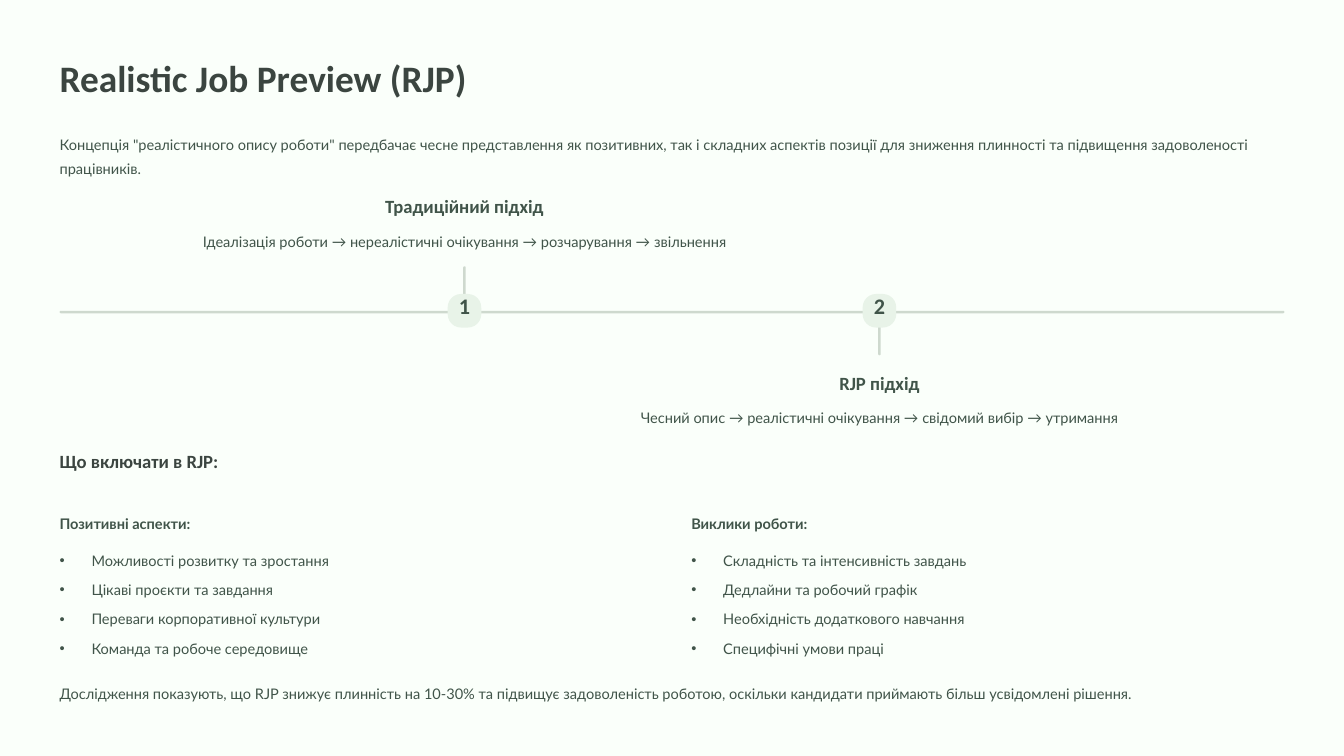
"""Build a slide on the Realistic Job Preview approach."""
from lxml.etree import SubElement
from pptx import Presentation
from pptx.dml.color import RGBColor as Color
from pptx.enum.shapes import MSO_SHAPE as Shape
from pptx.enum.text import MSO_ANCHOR as Anchor, MSO_AUTO_SIZE as AutoSize, PP_ALIGN as Align
from pptx.oxml.ns import qn
from pptx.util import Inches, Pt

COLORS = {"page": "FAFFFA", "title": "3B4540", "text": "405449",
          "line": "CED9CE", "badge": "E8F3E8"}
STYLES = {"title": ("Calibri", 32, 40, True, "title"),
          "section": ("Calibri", 16, 20, True, "title"),
          "heading": ("Calibri", 16, 20, True, "text"),
          "number": ("Calibri", 19, 19, True, "text"),
          "strong": ("Lato", 12.5, 20.5, True, "text"),
          "body": ("Lato", 12.5, 20.5, False, "text")}
COLUMNS, ROWS = 16, 9
MARGIN = 0.71
CONTENT = COLUMNS - 2 * MARGIN
LINE_HEIGHT = 0.28
AXIS = 3.7
BAR = 0.03
BADGE = 0.4

STEPS = [
    (5.53, "1", AXIS - 0.53, 2.31, "Традиційний підхід",
     "Ідеалізація роботи → нереалістичні очікування → розчарування → звільнення"),
    (10.47, "2", AXIS, 4.41, "RJP підхід",
     "Чесний опис → реалістичні очікування → свідомий вибір → утримання"),
]
ASPECTS = [
    (MARGIN, "Позитивні аспекти:",
     ["Можливості розвитку та зростання", "Цікаві проєкти та завдання",
      "Переваги корпоративної культури", "Команда та робоче середовище"]),
    (8.23, "Виклики роботи:",
     ["Складність та інтенсивність завдань", "Дедлайни та робочий графік",
      "Необхідність додаткового навчання", "Специфічні умови праці"]),
]


class SlideBuilder:
    """Hold the slide, its grid and its text styles."""

    def __init__(self, deck):
        """Add a two-list page with a plain background."""
        self.cell_width = deck.slide_width / COLUMNS
        self.cell_height = deck.slide_height / ROWS
        self.page = deck.slides.add_slide(deck.slide_layouts[3])
        self.paint(self.page.background.fill, "page")

    def paint(self, fill, color):
        """Apply a solid colour."""
        fill.solid()
        fill.fore_color.rgb = Color.from_string(COLORS[color])

    def place(self, left, top, width, height):
        """Turn columns and rows into slide lengths."""
        return (round(left * self.cell_width), round(top * self.cell_height),
                round(width * self.cell_width), round(height * self.cell_height))

    def set_lines(self, box, lines, style, align=Align.LEFT, bullets=False):
        """Set one styled paragraph per line."""
        font, size, leading, bold, color = STYLES[style]
        frame = box.text_frame
        frame.word_wrap = True
        frame.auto_size = AutoSize.NONE
        frame.vertical_anchor = Anchor.TOP
        frame.margin_left = frame.margin_right = frame.margin_top = frame.margin_bottom = 0
        for index, line in enumerate(lines):
            para = frame.add_paragraph() if index else frame.paragraphs[0]
            para.alignment = align
            para.line_spacing = Pt(leading)
            para.space_before = Pt(0)
            para.space_after = Pt(4.7 if bullets else 0)
            if bullets:
                self.add_bullet(para)
            span = para.add_run()
            span.text = line
            span.font.name = font
            span.font.size = Pt(size)
            span.font.bold = bold
            span.font.color.rgb = Color.from_string(COLORS[color])

    def add_bullet(self, para):
        """Give a paragraph a hanging round bullet."""
        props = para._p.get_or_add_pPr()
        props.set("marL", str(Inches(0.38)))
        props.set("indent", str(-Inches(0.38)))
        SubElement(props, qn("a:buChar"), char="•")

    def add_text(self, text, style, left, top, width, height=LINE_HEIGHT, align=Align.LEFT):
        """Add a text box."""
        box = self.page.shapes.add_textbox(*self.place(left, top, width, height))
        self.set_lines(box, [text], style, align)

    def fill_placeholder(self, index, lines, style, area, bullets=False):
        """Move a template placeholder and fill it."""
        box = self.page.placeholders[index]
        box.left, box.top, box.width, box.height = self.place(*area)
        self.set_lines(box, lines, style, bullets=bullets)

    def add_block(self, left, top, width, height, color, rounding=0.5):
        """Add a plain rounded block."""
        block = self.page.shapes.add_shape(
            Shape.ROUNDED_RECTANGLE, *self.place(left, top, width, height))
        block.adjustments[0] = rounding
        block.shadow.inherit = False
        block.line.fill.background()
        self.paint(block.fill, color)

    def add_step(self, center, number, stem_top, top, heading, caption):
        """Add a numbered timeline step with its labels."""
        self.add_block(center - BAR / 2, stem_top, BAR, 0.53, "line")
        self.add_block(center - BADGE / 2, 3.5, BADGE, BADGE, "badge", 0.4)
        labels = [(number, "number", 3.53, 0.27), (heading, "heading", top, 2.3),
                  (caption, "body", top + 0.385, 9.29)]
        for text, style, label_top, width in labels:
            self.add_text(text, style, center - width / 2, label_top, width,
                          align=Align.CENTER)


def main():
    """Build and save the deck."""
    deck = Presentation()
    deck.slide_width, deck.slide_height = Inches(16), Inches(9)
    slide = SlideBuilder(deck)
    slide.fill_placeholder(0, ["Realistic Job Preview (RJP)"], "title",
                           (MARGIN, 0.63, 6.22, 0.56))
    slide.add_text("Концепція \"реалістичного опису роботи\" передбачає чесне представлення "
                   "як позитивних, так і складних аспектів позиції для зниження плинності "
                   "та підвищення задоволеності працівників.",
                   "body", MARGIN, 1.54, CONTENT, 2 * LINE_HEIGHT)
    slide.add_block(MARGIN, AXIS, CONTENT, BAR, "line")
    for step in STEPS:
        slide.add_step(*step)
    slide.add_text("Що включати в RJP:", "section", MARGIN, 5.34, 2.37)
    for index, (left, heading, items) in enumerate(ASPECTS, start=1):
        slide.add_text(heading, "strong", left, 6.05, 7.07)
        slide.fill_placeholder(index, items, "body", (left, 6.49, 7.07, 1.4), bullets=True)
    slide.add_text("Дослідження показують, що RJP знижує плинність на 10-30% та підвищує "
                   "задоволеність роботою, оскільки кандидати приймають більш усвідомлені "
                   "рішення.", "body", MARGIN, 8.08, CONTENT)
    deck.save("out.pptx")


if __name__ == "__main__":
    main()
